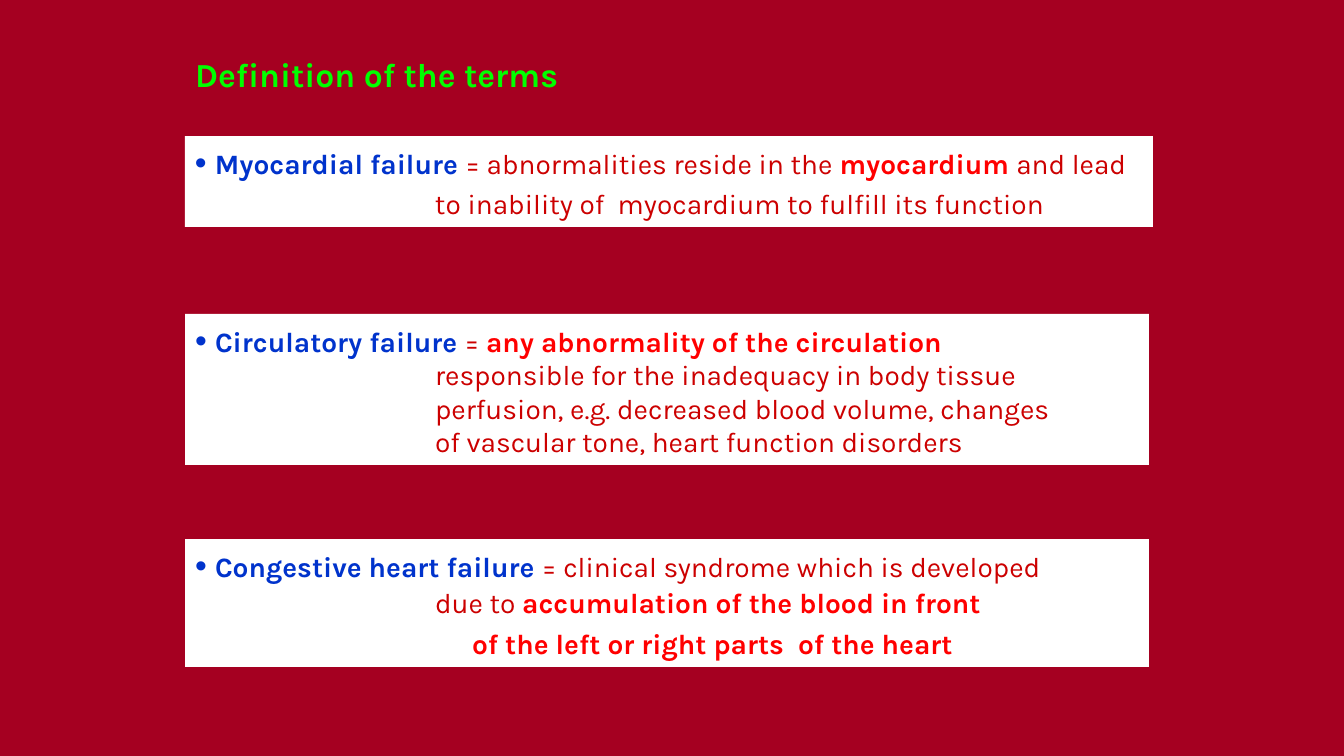
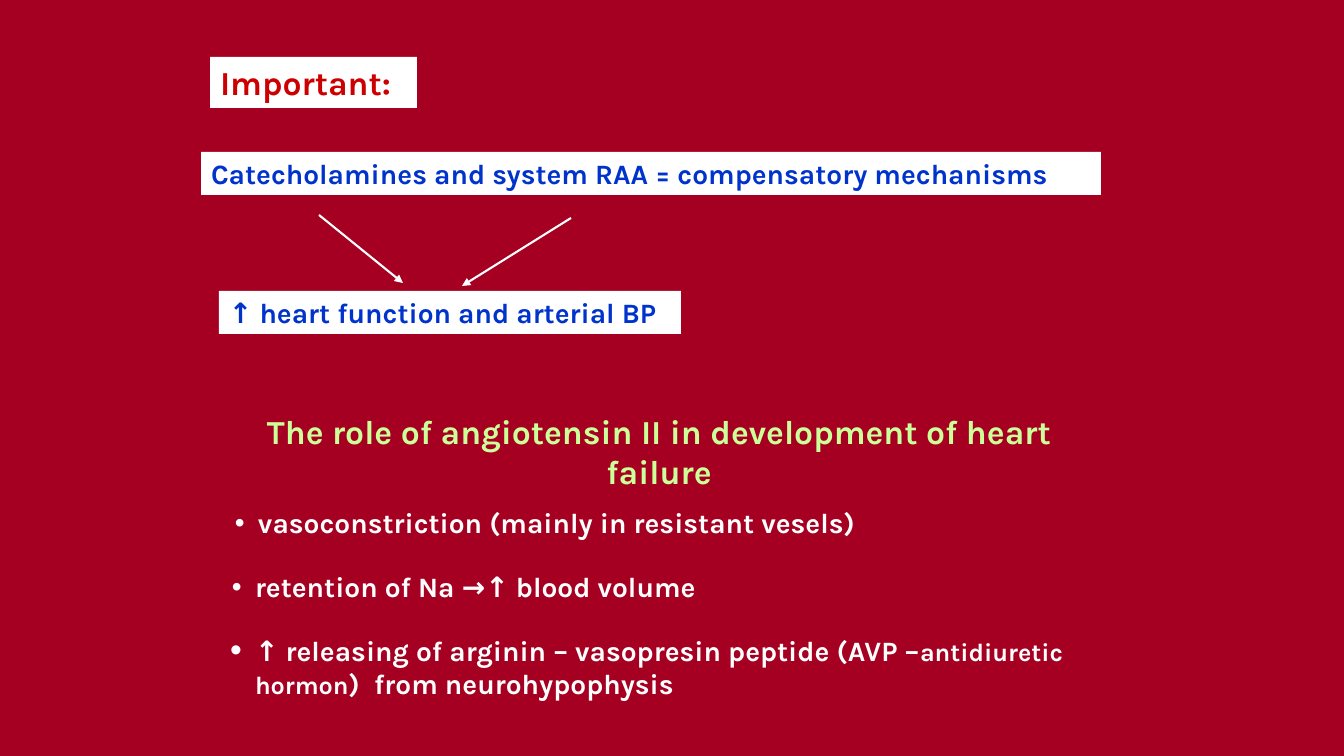
from dataclasses import dataclass
from lxml.etree import SubElement
from pptx import Presentation
from pptx.dml.color import RGBColor
from pptx.enum.shapes import MSO_CONNECTOR, MSO_SHAPE
from pptx.enum.text import MSO_ANCHOR, MSO_AUTO_SIZE, PP_ALIGN
from pptx.oxml.ns import qn
from pptx.util import Emu, Pt


@dataclass(frozen=True)
class Theme:
    font: str = "Karla"
    bullet_font: str = "Arial"
    background: str = "A50021"
    panel: str = "FFFFFF"
    white: str = "FFFFFF"
    green: str = "00FF00"
    lime: str = "CCFF99"
    blue: str = "0033CC"
    body: str = "CC0000"
    accent: str = "FF0000"
    heading_size: int = 24
    text_size: int = 20
    small_size: int = 18


T = Theme()
SLIDE_W, SLIDE_H = 1344, 756
EMU_PER_PX = 12192000 / SLIDE_W
INSET_X, INSET_Y = 10, 5
BIG_BULLET = 120       # percent of the text size
BIG_BULLET_INSET = 10  # room above a line that starts with a big bullet
HANG = 20              # bullet to text in a definition
TEXT_X = 240           # continuation lines of a definition


def px(n):
    return Emu(round(n * EMU_PER_PX))


def rgb(value):
    return RGBColor.from_string(value)


def add_run(p, text, color, size=T.text_size, bold=True):
    r = p.add_run()
    r.text = text
    r.font.name = T.font
    r.font.size = Pt(size)
    r.font.bold = bold
    r.font.color.rgb = rgb(color)


def set_indent(p, left, hanging=0):
    pPr = p._p.get_or_add_pPr()
    pPr.set("marL", str(px(left)))
    pPr.set("indent", str(px(-hanging)))
    return pPr


def set_bullet(p, color, hanging, percent=100):
    pPr = set_indent(p, hanging, hanging)
    clr = SubElement(pPr, qn("a:buClr"))
    SubElement(clr, qn("a:srgbClr"), val=color)
    SubElement(pPr, qn("a:buSzPct"), val=str(percent * 1000))
    SubElement(pPr, qn("a:buFont"), typeface=T.bullet_font)
    SubElement(pPr, qn("a:buChar"), char="•")


def frame(shape, top=INSET_Y):
    """Prepare a text frame and return it."""
    tf = shape.text_frame
    tf.word_wrap = True
    tf.auto_size = MSO_AUTO_SIZE.NONE
    tf.vertical_anchor = MSO_ANCHOR.TOP
    tf.margin_left = tf.margin_right = px(INSET_X)
    tf.margin_top, tf.margin_bottom = px(top), px(INSET_Y)
    tf.paragraphs[0].alignment = PP_ALIGN.LEFT
    return tf


def fill_white(shape):
    shape.fill.solid()
    shape.fill.fore_color.rgb = rgb(T.panel)


def add_titled_slide(prs, text, box, color, panel=False):
    s = prs.slides.add_slide(prs.slide_layouts[5])
    title = s.shapes.title
    title.left, title.top, title.width, title.height = map(px, box)
    if panel:
        fill_white(title)
    add_run(frame(title).paragraphs[0], text, color, T.heading_size)
    return s


def add_panel(s, box, top=INSET_Y):
    """White rectangle; returns its text frame."""
    sp = s.shapes.add_shape(MSO_SHAPE.RECTANGLE, *map(px, box))
    sp.shadow.inherit = False
    sp.line.fill.background()
    fill_white(sp)
    return frame(sp, top)


def add_text(s, box, top=INSET_Y):
    return frame(s.shapes.add_textbox(*map(px, box)), top)


def add_definition(s, box, term, first_line, more_lines):
    """first_line holds runs; more_lines holds (spacing, indent, runs)."""
    tf = add_panel(s, box, BIG_BULLET_INSET)
    p = tf.paragraphs[0]
    set_bullet(p, T.blue, HANG, BIG_BULLET)
    add_run(p, term + " ", T.blue)
    add_definition_runs(p, first_line)
    for spacing, indent, runs in more_lines:
        p = tf.add_paragraph()
        p.alignment = PP_ALIGN.LEFT
        p.line_spacing = spacing
        set_indent(p, indent)
        add_definition_runs(p, runs)


def add_definition_runs(p, runs):
    for text, strong in runs:
        add_run(p, text, T.accent if strong else T.body, bold=strong)


def add_arrow(s, start, end):
    c = s.shapes.add_connector(MSO_CONNECTOR.STRAIGHT, *map(px, start + end))
    c.line.color.rgb = rgb(T.white)
    c.line.width = Pt(1.5)
    SubElement(c.line._get_or_add_ln(), qn("a:tailEnd"), type="triangle")
    SubElement(c._element.spPr, qn("a:effectLst"))


def build_definitions(prs):
    s = add_titled_slide(prs, "Definition of the terms", (185, 49, 546, 50), T.green)
    add_definition(
        s, (185, 136, 968, 91), "Myocardial failure",
        [("= abnormalities reside in the ", False), ("myocardium ", True),
         ("and lead", False)],
        [(1.2, TEXT_X,
          [("to inability of  myocardium to fulfill its function", False)])])
    add_definition(
        s, (185, 314, 964, 151), "Circulatory failure",
        [("= ", False), ("any abnormality of the circulation", True)],
        [(1.0, TEXT_X, [(line, False)]) for line in (
            "responsible for the inadequacy in body tissue",
            "perfusion, e.g. decreased blood volume, changes",
            "of vascular tone, heart function disorders")])
    add_definition(
        s, (185, 539, 964, 128), "Congestive heart failure",
        [("= clinical syndrome which is developed", False)],
        [(1.1, TEXT_X, [("due to ", False),
                        ("accumulation of the blood in front", True)]),
         (1.2, TEXT_X + 37, [("of the left or right parts  of the heart", True)])])


def build_mechanisms(prs):
    s = add_titled_slide(prs, "Important:", (210, 57, 207, 51), T.body, panel=True)

    # Mechanisms and their effect
    for box, text in (
            ((201, 152, 900, 43),
             "Catecholamines and system RAA = compensatory mechanisms"),
            ((219, 291, 462, 43), "↑ heart function and arterial BP")):
        add_run(add_panel(s, box).paragraphs[0], text, T.blue)
    add_arrow(s, (571, 218), (462, 286))
    add_arrow(s, (319, 215), (403, 283))

    # Role of angiotensin II
    p = add_text(s, (217, 406, 884, 92)).paragraphs[0]
    p.alignment = PP_ALIGN.CENTER
    add_run(p, "The role of angiotensin II in development of heart failure",
            T.lime, T.heading_size)
    effects = (
        ((225, 501, 669, 43), 23, 100, INSET_Y,
         [("vasoconstriction (mainly in resistant vesels)", T.text_size)]),
        ((222, 565, 513, 43), 23, 100, INSET_Y,
         [("retention of Na →↑ blood volume", T.text_size)]),
        ((220, 623, 900, 84), 25, BIG_BULLET, BIG_BULLET_INSET,
         [("↑ releasing of arginin – vasopresin peptide (AVP –", T.text_size),
          ("antidiuretic hormon", T.small_size),
          (")  from neurohypophysis", T.text_size)]))
    for box, hanging, percent, top, runs in effects:
        p = add_text(s, box, top).paragraphs[0]
        set_bullet(p, T.white, hanging, percent)
        for text, size in runs:
            add_run(p, text, T.white, size)


def main():
    prs = Presentation()
    prs.slide_width, prs.slide_height = px(SLIDE_W), px(SLIDE_H)
    background = prs.slide_master.background.fill
    background.solid()
    background.fore_color.rgb = rgb(T.background)
    build_definitions(prs)
    build_mechanisms(prs)
    prs.save("out.pptx")


if __name__ == "__main__":
    main()
